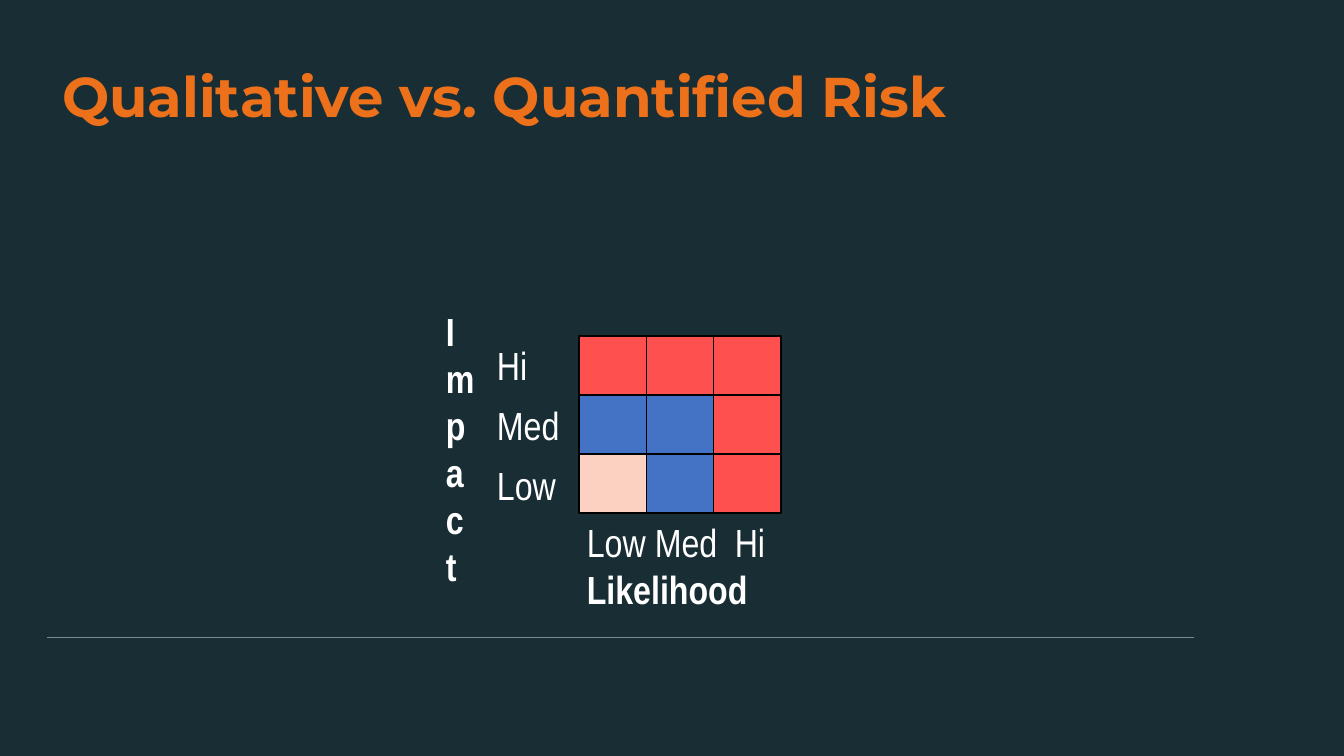
from lxml import etree
from pptx import Presentation
from pptx.dml.color import RGBColor
from pptx.enum.shapes import MSO_CONNECTOR, MSO_SHAPE
from pptx.enum.text import MSO_ANCHOR, MSO_AUTO_SIZE, PP_ALIGN
from pptx.oxml.ns import qn
from pptx.util import Pt

RECTANGLE = MSO_SHAPE.RECTANGLE
STRAIGHT = MSO_CONNECTOR.STRAIGHT
TOP = MSO_ANCHOR.TOP
LEFT = PP_ALIGN.LEFT
NO_AUTOFIT = MSO_AUTO_SIZE.NONE

EMU_PER_PX = 914400 / 100.8
BACKGROUND, ORANGE, WHITE, BLACK, RULE_GRAY = "192E34", "ED701A", "FFFFFF", "000000", "7C8A8E"
RISK_COLORS = {"high": "FF5050", "medium": "4472C4", "low": "FCD1C1"}
RISK_ROWS = [
    ["high", "high", "high"],
    ["medium", "medium", "high"],
    ["low", "medium", "high"],
]


def px(length):
    return round(length * EMU_PER_PX)


def color(hex_text):
    return RGBColor.from_string(hex_text)


def add_title(slide, left, top, width, height, text):
    title = slide.shapes.title
    title.left, title.top, title.width, title.height = map(px, (left, top, width, height))
    frame = title.text_frame
    frame.text = text
    frame.word_wrap = True
    frame.auto_size = NO_AUTOFIT
    frame.vertical_anchor = TOP
    paragraph = frame.paragraphs[0]
    paragraph.alignment = LEFT
    paragraph.line_spacing = 0.9
    paragraph.font.name = "Montserrat"
    paragraph.font.size = Pt(40)
    paragraph.font.bold = True
    paragraph.font.color.rgb = color(ORANGE)


def add_rule(slide, left, top, width):
    rule = slide.shapes.add_connector(STRAIGHT, px(left), px(top), px(left + width), px(top))
    rule.line.color.rgb = color(RULE_GRAY)
    rule.line.width = Pt(0.5)
    etree.SubElement(rule._element.spPr, qn("a:effectLst"))


def add_labels(slide, left, top, width, height, labels, gap=0, tab_stops=()):
    box = slide.shapes.add_textbox(px(left), px(top), px(width), px(height))
    frame = box.text_frame
    frame.word_wrap = True
    for index, (text, bold) in enumerate(labels):
        paragraph = frame.add_paragraph() if index else frame.paragraphs[0]
        paragraph.text = text
        if index and gap:
            paragraph.space_before = Pt(gap)
        if "\t" in text:
            properties = paragraph._p.get_or_add_pPr()
            tab_list = etree.SubElement(properties, qn("a:tabLst"))
            for stop in tab_stops:
                etree.SubElement(tab_list, qn("a:tab"), pos=str(px(stop)), algn="l")
        paragraph.font.name = "Arial Narrow"
        paragraph.font.size = Pt(28)
        paragraph.font.bold = bold
        paragraph.font.color.rgb = color(WHITE)


def add_risk_grid(slide, left, top, width, height):
    cell_width = width / len(RISK_ROWS[0])
    cell_height = height / len(RISK_ROWS)
    for row, levels in enumerate(RISK_ROWS):
        for column, level in enumerate(levels):
            cell = slide.shapes.add_shape(
                RECTANGLE,
                px(left + column * cell_width), px(top + row * cell_height),
                px(cell_width), px(cell_height),
            )
            cell.shadow.inherit = False
            cell.fill.solid()
            cell.fill.fore_color.rgb = color(RISK_COLORS[level])
            cell.line.color.rgb = color(BLACK)
            cell.line.width = Pt(1)


def add_risk_matrix(slide, left, top, width, height):
    grid_left, grid_top, grid_width, grid_height = left + 143, top + 34, 202, 177
    add_risk_grid(slide, grid_left, grid_top, grid_width, grid_height)
    add_labels(slide, left, top, 48, 292, [(letter, True) for letter in "Impact"])
    add_labels(slide, left + 51, grid_top, 84, grid_height,
               [(level, False) for level in ("Hi", "Med", "Low")], gap=9.5)
    axis_top = grid_top + grid_height
    add_labels(slide, grid_left - 2, axis_top, left + width - grid_left + 2,
               top + height - axis_top,
               [("Low\tMed\tHi", False), ("Likelihood", True)], tab_stops=(68, 148))


def main():
    presentation = Presentation()
    presentation.slide_width, presentation.slide_height = px(1344), px(756)
    slide = presentation.slides.add_slide(presentation.slide_layouts[5])
    fill = slide.background.fill
    fill.solid()
    fill.fore_color.rgb = color(BACKGROUND)
    add_rule(slide, 47, 637, 1147)
    add_title(slide, 52, 64, 1200, 72, "Qualitative vs. Quantified Risk")
    add_risk_matrix(slide, 436, 302, 345, 315)
    presentation.save("out.pptx")


if __name__ == "__main__":
    main()
